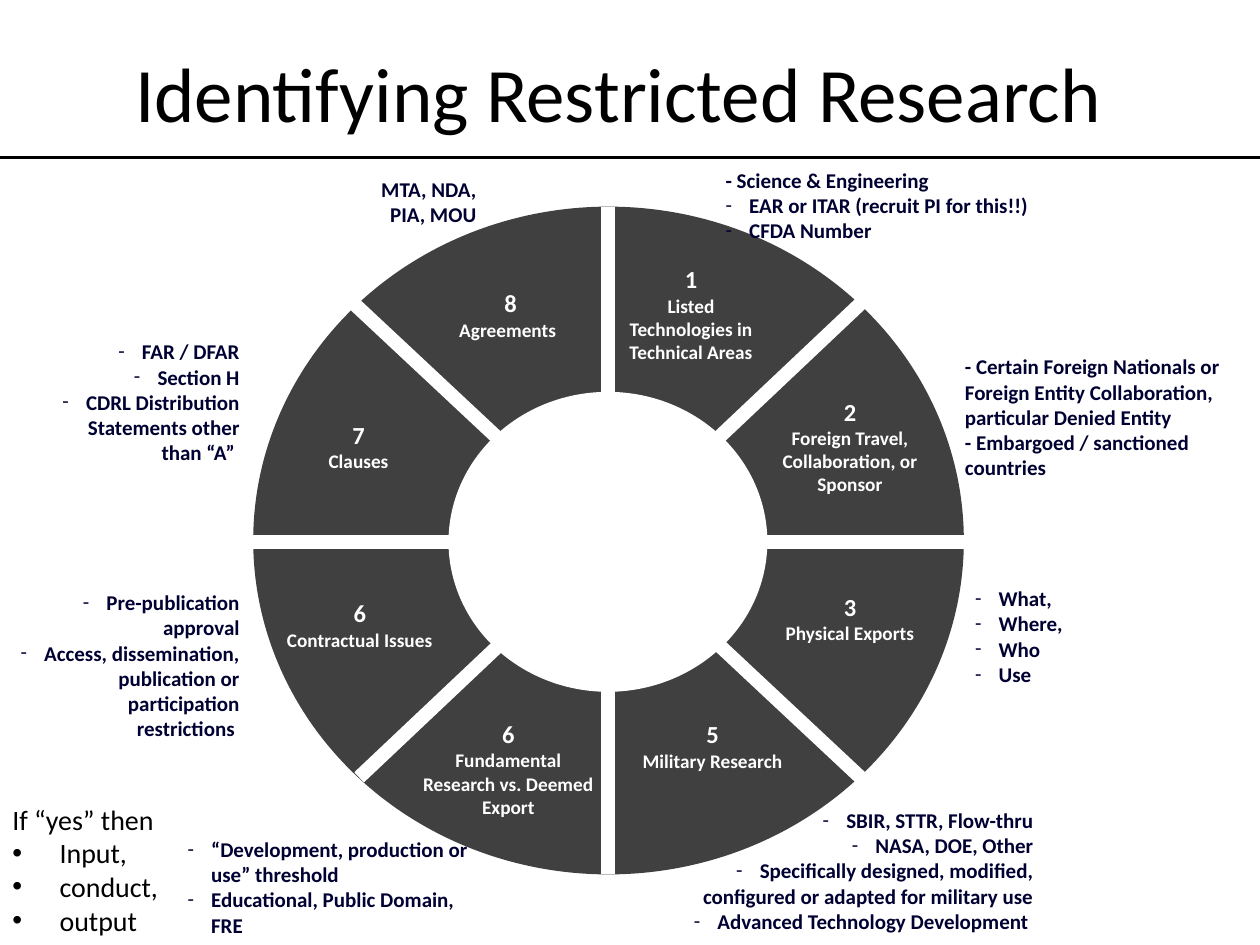
import pptx
import pptx.util
import pptx.dml.color
import pptx.enum.shapes
import pptx.enum.text
import pptx.oxml.ns
from lxml import etree

Pt = pptx.util.Pt
RGBColor = pptx.dml.color.RGBColor
ALIGN = pptx.enum.text.PP_ALIGN
qn = pptx.oxml.ns.qn

BLACK = RGBColor(0x00, 0x00, 0x00)
WHITE = RGBColor(0xFF, 0xFF, 0xFF)
CHARCOAL = RGBColor(0x40, 0x40, 0x40)
NAVY = RGBColor(0x00, 0x00, 0x32)
FONT = "Calibri"

TITLE = "Identifying Restricted Research"

# Ring: left, top, width, height
DISC = (144.7, 118.1, 406.1, 381.6)
HOLE = (256.3, 223.9, 182.2, 171.4)
# Dividers: start x, start y, end x, end y
DIVIDERS_BELOW = [(347.4, 118.1, 347.4, 499.7), (493.2, 172.1, 205.2, 444.2)]
DIVIDERS_ABOVE = [(144.7, 309.6, 550.8, 309.6), (203, 174.2, 492.5, 445)]
RULE = (0, 90, 720, 90)

# Segments: left, top, width, height, number, label paragraphs
SEGMENTS = [
    (336.2, 147.6, 117.4, 64, "1", ["Listed", "Technologies in Technical Areas"]),
    (231.8, 407.5, 117.4, 64, "6", ["Fundamental Research vs. Deemed Export"]),
    (427, 334.8, 117.4, 37.4, "3", ["Physical Exports"]),
    (427, 223.2, 117.4, 64, "2", ["Foreign Travel, Collaboration, or Sponsor"]),
    (348.5, 407.5, 117.4, 37.4, "5", ["Military Research"]),
    (146.9, 338.4, 117.4, 37.4, "6", ["Contractual Issues"]),
    (146.2, 236.2, 117.4, 37.4, "7", ["Clauses"]),
    (248.4, 161.3, 83.5, 37.4, " 8", ["Agreements"]),
]

# Notes: left, top, width, height, alignment, plain paragraphs, dashed paragraphs
NOTES = [
    (544.3, 198.7, 175.7, 79.9, ALIGN.LEFT,
     ["- Certain Foreign Nationals or Foreign Entity Collaboration, particular Denied Entity",
      "- Embargoed / sanctioned countries"], []),
    (407.5, 92.2, 210.2, 51.1, ALIGN.LEFT,
     ["- Science & Engineering"],
     ["EAR or ITAR (recruit PI for this!!)", "CFDA Number"]),
    (203, 97.2, 76.3, 51.1, ALIGN.RIGHT, ["MTA, NDA, PIA, MOU"], []),
    (100.1, 474.5, 175.7, 65.5, ALIGN.LEFT, [],
     ["“Development, production or use” threshold",
      "Educational, Public Domain, FRE"]),
    (550.1, 331.2, 98.6, 65.5, ALIGN.LEFT, [], ["What,", "Where,", "Who", "Use"]),
    (373, 457.9, 224.6, 79.9, ALIGN.RIGHT, [],
     ["SBIR, STTR, Flow-thru", "NASA, DOE, Other",
      "Specifically designed, modified, configured or adapted for military use",
      "Advanced Technology Development "]),
    (0, 333.4, 144, 94.3, ALIGN.RIGHT, [],
     ["Pre-publication approval",
      "Access, dissemination, publication or participation restrictions "]),
    (13, 190.1, 131, 79.9, ALIGN.RIGHT, [],
     ["FAR / DFAR", "Section H",
      "CDRL Distribution Statements other than “A” "]),
]

OUTCOME_BOX = (0, 455, 141.8, 85)
OUTCOME_LEAD = "If “yes” then"
OUTCOMES = ["Input,", "conduct,", "output"]


def points(values):
    return [Pt(value) for value in values]


def add_disc(page, bounds, color):
    disc = page.shapes.add_shape(
        pptx.enum.shapes.MSO_SHAPE.OVAL, *points(bounds))
    disc.shadow.inherit = False
    disc.fill.solid()
    disc.fill.fore_color.rgb = color
    disc.line.fill.background()


def add_line(page, ends, color, width):
    line = page.shapes.add_connector(
        pptx.enum.shapes.MSO_CONNECTOR.STRAIGHT, *points(ends))
    line.line.color.rgb = color
    line.line.width = Pt(width)
    etree.SubElement(line._element.spPr, qn("a:effectLst"))


def set_bullet(para, symbol, indent):
    """Give the paragraph a hanging bullet."""
    properties = para._p.get_or_add_pPr()
    properties.set("marL", str(Pt(indent)))
    properties.set("indent", str(-Pt(indent)))
    font = etree.SubElement(properties, qn("a:buFont"))
    font.set("typeface", "Arial" if symbol == "•" else FONT)
    etree.SubElement(properties, qn("a:buChar")).set("char", symbol)


def add_span(para, text, size, color, bold):
    span = para.add_run()
    span.text = text
    span.font.name = FONT
    span.font.size = Pt(size)
    span.font.bold = bold
    span.font.color.rgb = color


def add_text(page, bounds, lines, color, align, bold=True, indent=13.5):
    """Add a text box; each line is (text, size, bullet or None)."""
    box = page.shapes.add_textbox(*points(bounds))
    frame = box.text_frame
    frame.word_wrap = True
    frame.auto_size = pptx.enum.text.MSO_AUTO_SIZE.SHAPE_TO_FIT_TEXT
    for index, (text, size, bullet) in enumerate(lines):
        para = frame.add_paragraph() if index else frame.paragraphs[0]
        para.alignment = align
        if bullet:
            set_bullet(para, bullet, indent)
        add_span(para, text, size, color, bold)


def add_title(page):
    title = page.shapes.title
    title.left, title.top, title.width, title.height = points((29.5, 7.2, 648, 90))
    title.text_frame.vertical_anchor = pptx.enum.text.MSO_ANCHOR.MIDDLE
    para = title.text_frame.paragraphs[0]
    para.alignment = ALIGN.CENTER
    add_span(para, TITLE, 44, BLACK, False)


def main():
    deck = pptx.Presentation()
    deck.slide_width, deck.slide_height = Pt(720), Pt(540)
    page = deck.slides.add_slide(deck.slide_layouts[5])
    add_title(page)

    add_disc(page, DISC, CHARCOAL)
    for ends in DIVIDERS_BELOW:
        add_line(page, ends, WHITE, 8)
    add_disc(page, HOLE, WHITE)
    for ends in DIVIDERS_ABOVE:
        add_line(page, ends, WHITE, 8)

    for *bounds, number, labels in SEGMENTS:
        lines = [(number, 14, None)] + [(label, 11, None) for label in labels]
        add_text(page, bounds, lines, WHITE, ALIGN.CENTER)

    lines = [(OUTCOME_LEAD, 16, None)] + [(text, 16, "•") for text in OUTCOMES]
    add_text(page, OUTCOME_BOX, lines, BLACK, ALIGN.LEFT, bold=False, indent=27)

    for *bounds, align, plain, dashed in NOTES:
        lines = [(text, 12, None) for text in plain]
        lines += [(text, 12, "-") for text in dashed]
        add_text(page, bounds, lines, NAVY, align)

    add_line(page, RULE, BLACK, 2)
    deck.save("out.pptx")


if __name__ == "__main__":
    main()
